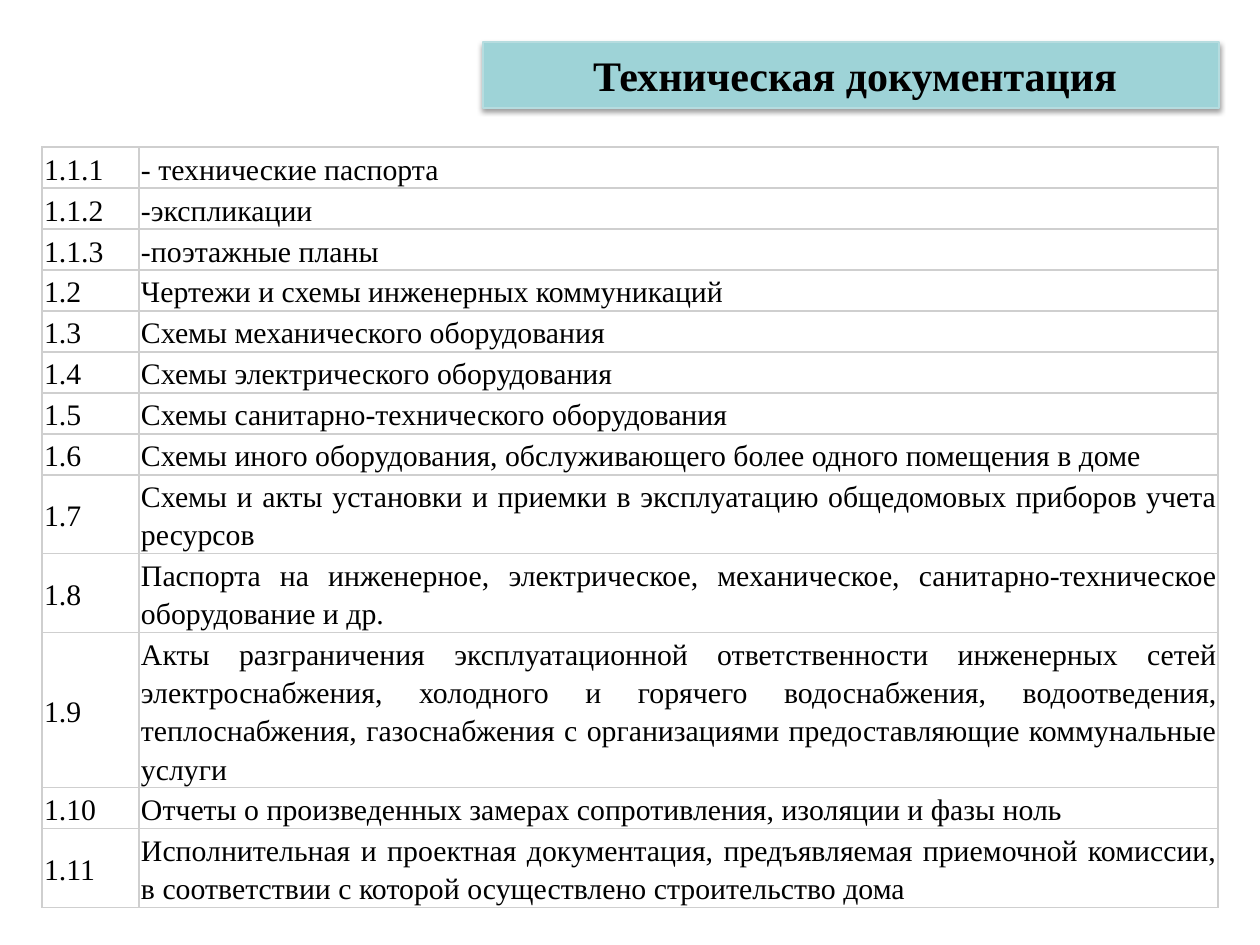
import pptx
import pptx.dml.color
import pptx.enum.text
import pptx.oxml
import pptx.oxml.ns
import pptx.util

DOCUMENTS = [
    ("1.1.1", "- технические паспорта", 1),
    ("1.1.2", "-экспликации", 1),
    ("1.1.3", "-поэтажные планы", 1),
    ("1.2", "Чертежи и схемы инженерных коммуникаций", 1),
    ("1.3", "Схемы механического оборудования", 1),
    ("1.4", "Схемы электрического оборудования", 1),
    ("1.5", "Схемы санитарно-технического оборудования", 1),
    ("1.6", "Схемы иного оборудования, обслуживающего более одного помещения в доме", 1),
    ("1.7", "Схемы и акты установки и приемки в эксплуатацию общедомовых приборов учета ресурсов", 2),
    ("1.8", "Паспорта на инженерное, электрическое, механическое, санитарно-техническое "
            "оборудование и др.", 2),
    ("1.9", "Акты разграничения эксплуатационной ответственности инженерных сетей "
            "электроснабжения, холодного и горячего водоснабжения, водоотведения, "
            "теплоснабжения, газоснабжения с организациями предоставляющие коммунальные услуги", 4),
    ("1.10", "Отчеты о произведенных замерах сопротивления, изоляции и фазы ноль", 1),
    ("1.11", "Исполнительная и проектная документация, предъявляемая приемочной комиссии, "
             "в соответствии с которой осуществлено строительство дома", 2),
]
LINE_HEIGHT, ROW_PADDING = 38, 3


def px(length):
    return pptx.util.Emu(round(length * 914400 / 126))


def color(value):
    return pptx.dml.color.RGBColor.from_string(value)


def element(markup):
    head, tail = markup.split(" ", 1)
    return pptx.oxml.parse_xml(f"{head} {pptx.oxml.ns.nsdecls('a')} {tail}")


class Deck:
    """Holds the style and the current slide, and draws each kind of element."""

    font = "Times New Roman"
    ink = "000000"
    border = "CFCFCF"
    banner_fill = "9ED3D7"
    banner_line = "B6DCDF"

    def __init__(self, width, height):
        self.presentation = pptx.Presentation()
        self.presentation.slide_width = px(width)
        self.presentation.slide_height = px(height)
        self.slide = self.presentation.slides.add_slide(self.presentation.slide_layouts[5])

    def text(self, paragraph, words, size, align, bold=False):
        paragraph.alignment = align
        run = paragraph.add_run()
        run.text = words
        run.font.name = self.font
        run.font.size = pptx.util.Pt(size)
        run.font.bold = bold
        run.font.color.rgb = color(self.ink)

    def title(self, words, left, top, width, height):
        banner = self.slide.shapes.title
        banner.left, banner.top, banner.width, banner.height = map(px, (left, top, width, height))
        properties = banner.element.spPr
        properties.append(element(
            '<a:prstGeom prst="roundRect"><a:avLst><a:gd name="adj" fmla="val 4400"/>'
            '</a:avLst></a:prstGeom>'))
        banner.fill.solid()
        banner.fill.fore_color.rgb = color(self.banner_fill)
        banner.line.color.rgb = color(self.banner_line)
        banner.line.width = pptx.util.Pt(0.75)
        properties.append(element(
            '<a:effectLst ><a:outerShdw blurRad="39400" dist="20300" dir="5400000" rotWithShape="0">'
            '<a:srgbClr val="000000"><a:alpha val="38000"/></a:srgbClr>'
            '</a:outerShdw></a:effectLst>'))
        frame = banner.text_frame
        frame.word_wrap = True
        frame.auto_size = pptx.enum.text.MSO_AUTO_SIZE.NONE
        frame.vertical_anchor = pptx.enum.text.MSO_ANCHOR.MIDDLE
        frame.margin_left, frame.margin_right = px(8), px(0)
        frame.margin_top = frame.margin_bottom = px(6)
        self.text(frame.paragraphs[0], words, 24, pptx.enum.text.PP_ALIGN.CENTER, bold=True)

    def cell(self, cell, words):
        properties = cell._tc.get_or_add_tcPr()
        for side in "LRTB":
            properties.append(element(
                f'<a:ln{side} w="12700"><a:solidFill><a:srgbClr val="{self.border}"/>'
                f'</a:solidFill></a:ln{side}>'))
        cell.fill.background()
        cell.vertical_anchor = pptx.enum.text.MSO_ANCHOR.MIDDLE
        cell.margin_left = cell.margin_right = cell.margin_top = cell.margin_bottom = px(1)
        paragraph = cell.text_frame.paragraphs[0]
        paragraph.line_spacing = 1.15
        paragraph.space_after = pptx.util.Pt(1)
        indent = paragraph._p.get_or_add_pPr()
        indent.set("marL", str(px(1)))
        indent.set("indent", "0")
        self.text(paragraph, words, 17, pptx.enum.text.PP_ALIGN.JUSTIFY)

    def table(self, documents, left, top, widths):
        heights = [LINE_HEIGHT * lines + ROW_PADDING for *_, lines in documents]
        register = self.slide.shapes.add_table(
            len(documents), len(widths), px(left), px(top), px(sum(widths)), px(sum(heights))).table
        register.first_row = register.horz_banding = False
        for column, width in zip(register.columns, widths):
            column.width = px(width)
        for row, height, (number, name, _) in zip(register.rows, heights, documents):
            row.height = px(height)
            for cell, words in zip(row.cells, (number, name)):
                self.cell(cell, words)

    def save(self):
        self.presentation.save("out.pptx")


def main():
    deck = Deck(1260, 945)
    deck.table(DOCUMENTS, 42, 147, (97, 1079))
    deck.title("Техническая документация", 483, 42, 736, 66)
    deck.save()


if __name__ == "__main__":
    main()
